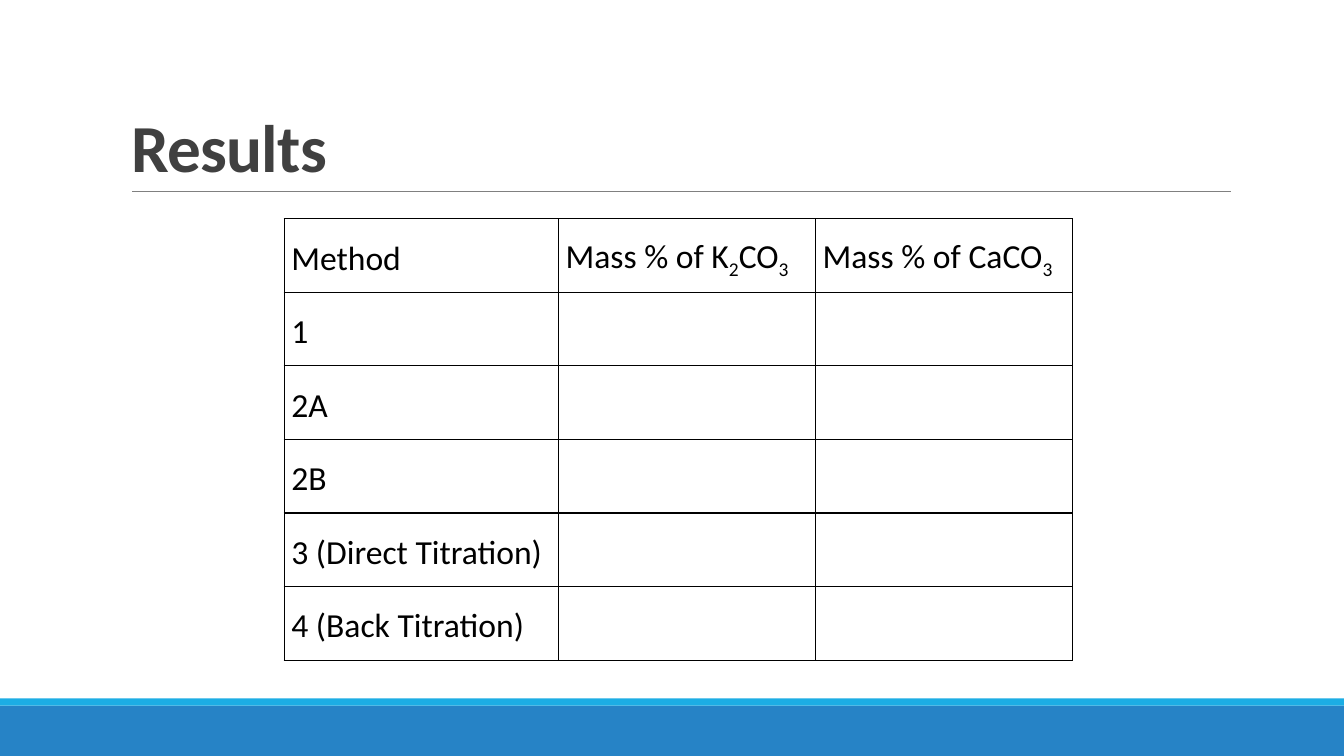
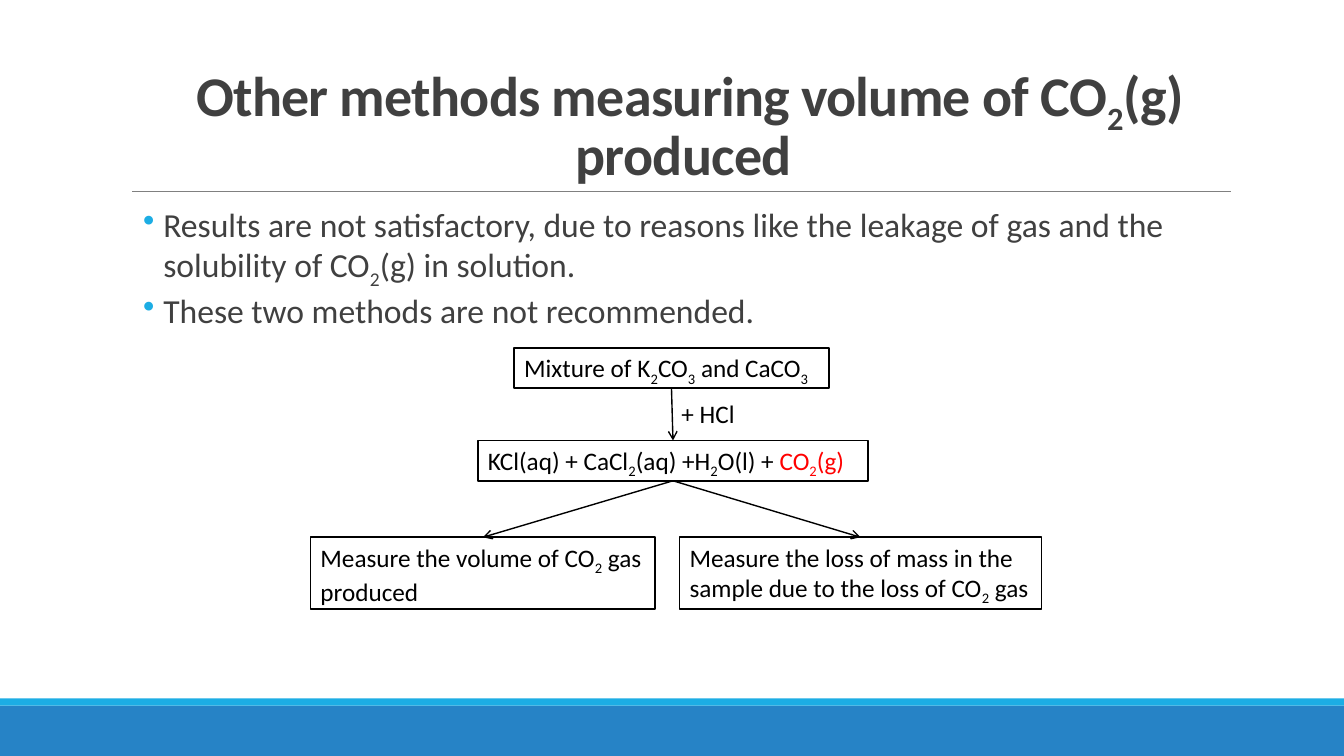
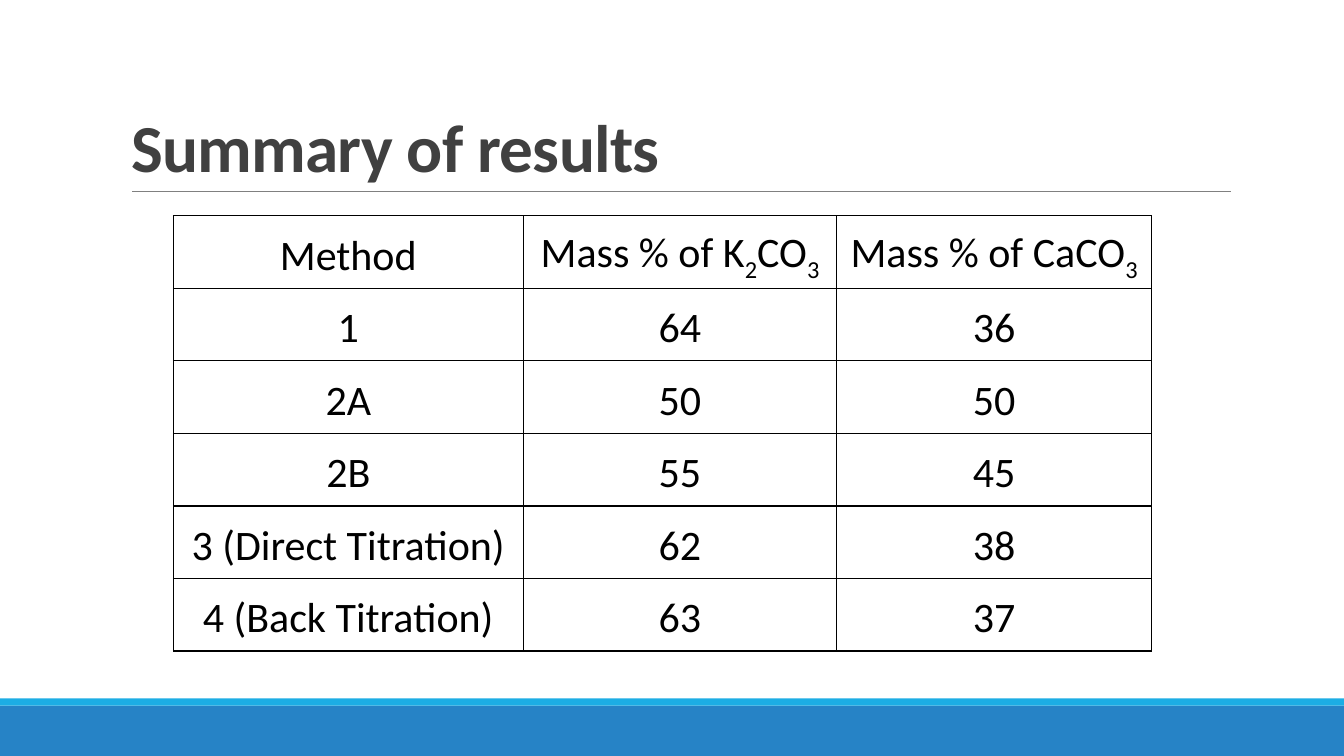
from lxml import etree
from pptx import Presentation
from pptx.dml.color import RGBColor
from pptx.enum.shapes import MSO_CONNECTOR, MSO_SHAPE
from pptx.enum.text import MSO_ANCHOR, MSO_AUTO_SIZE, PP_ALIGN
from pptx.oxml.ns import qn
from pptx.util import Inches, Pt

COLORS = {"band": "2683C6", "accent": "1CADE4", "rule": "808080", "text": "404040",
          "black": "000000", "white": "FFFFFF", "red": "FF0000"}
FONT = "Calibri"
TITLE_BOX = (1.2, 0.31, 11, 1.59)
HEADERS = ["Method", "Mass % of K~2~CO~3~", "Mass % of CaCO~3~"]
METHODS = ["1", "2A", "2B", "3 (Direct Titration)", "4 (Back Titration)"]
RESULTS = [(64, 36), (50, 50), (55, 45), (62, 38), (63, 37)]


def rgb(name):
    return RGBColor.from_string(COLORS[name])


def inches(*values):
    return [Inches(v) for v in values]


def add_runs(p, text, size, color="black", bold=False, spacing=None):
    """Add text as runs; parts between tildes become subscripts."""
    for i, part in enumerate(text.split("~")):
        if not part:
            continue
        r = p.add_run()
        r.text = part
        r.font.name, r.font.size, r.font.bold = FONT, Pt(size), bold
        r.font.color.rgb = rgb(color)
        rPr = r.font._element
        if i % 2:
            rPr.set("baseline", "-25000")
        if spacing is not None:
            rPr.set("spc", str(int(spacing * 100)))


def add_line(s, start, end, color, width, arrow=False):
    line = s.shapes.add_connector(MSO_CONNECTOR.STRAIGHT, *inches(*start, *end))
    line.line.color.rgb = rgb(color)
    line.line.width = Pt(width)
    if arrow:
        etree.SubElement(line.line._get_or_add_ln(), qn("a:tailEnd"), type="arrow")
    etree.SubElement(line._element.spPr, qn("a:effectLst"))
    return line


def add_rect(s, box, fill, outline=None):
    sp = s.shapes.add_shape(MSO_SHAPE.RECTANGLE, *inches(*box))
    sp.shadow.inherit = False
    sp.fill.solid()
    sp.fill.fore_color.rgb = rgb(fill)
    if outline:
        sp.line.color.rgb = rgb(outline)
        sp.line.width = Pt(1.25)
    else:
        sp.line.fill.background()
    return sp


def add_titled_slide(prs, title, size=48, box=TITLE_BOX, align=PP_ALIGN.LEFT):
    s = prs.slides.add_slide(prs.slide_layouts[5])
    add_rect(s, (0, 7, 13.33, 0.5), "band")
    add_rect(s, (0, 6.93, 13.33, 0.07), "accent")
    add_line(s, (1.31, 1.9), (12.21, 1.9), "rule", 0.5)
    sp = s.shapes.title
    sp.left, sp.top, sp.width, sp.height = inches(*box)
    tf = sp.text_frame
    tf.auto_size = MSO_AUTO_SIZE.NONE
    tf.vertical_anchor = MSO_ANCHOR.BOTTOM
    p = tf.paragraphs[0]
    p.alignment, p.line_spacing = align, 0.85
    add_runs(p, title, size, "text", bold=True, spacing=-0.5)
    return s


def add_borders(cell):
    tcPr = cell._tc.get_or_add_tcPr()
    for i, side in enumerate(("lnL", "lnR", "lnT", "lnB")):
        ln = etree.Element(qn("a:" + side), w=str(Pt(1)))
        fill = etree.SubElement(ln, qn("a:solidFill"))
        etree.SubElement(fill, qn("a:srgbClr"), val=COLORS["black"])
        tcPr.insert(i, ln)


def add_results_table(s, left, top, col_widths, row_height, rows, size, align):
    table = s.shapes.add_table(len(rows), len(col_widths), *inches(
        left, top, sum(col_widths), row_height * len(rows))).table
    table.first_row = table.horz_banding = False
    for column, width in zip(table.columns, col_widths):
        column.width = Inches(width)
    for row, texts in zip(table.rows, rows):
        row.height = Inches(row_height)
        for cell, text in zip(row.cells, texts):
            cell.fill.background()
            add_borders(cell)
            cell.vertical_anchor = MSO_ANCHOR.MIDDLE
            cell.margin_left = cell.margin_right = Inches(0.07)
            cell.margin_top = cell.margin_bottom = 0
            if text:
                p = cell.text_frame.paragraphs[0]
                p.alignment, p.line_spacing = align, 1.15
                p.space_before = p.space_after = Pt(5)
                add_runs(p, text, size)


def add_bullets(s, box, items):
    tf = s.shapes.add_textbox(*inches(*box)).text_frame
    tf.word_wrap = True
    tf.margin_left = tf.margin_right = 0
    for i, item in enumerate(items):
        p = tf.add_paragraph() if i else tf.paragraphs[0]
        p.line_spacing, p.space_before, p.space_after = 0.9, Pt(2), Pt(4)
        pPr = p._p.get_or_add_pPr()
        pPr.set("marL", str(Inches(0.42)))
        pPr.set("indent", str(Inches(-0.2)))
        color = etree.SubElement(pPr, qn("a:buClr"))
        etree.SubElement(color, qn("a:srgbClr"), val=COLORS["accent"])
        etree.SubElement(pPr, qn("a:buChar"), char="•")
        add_runs(p, item, 24, "text")


def fill_label(sp, *parts):
    """Write (text, color) parts as one left-aligned paragraph."""
    tf = sp.text_frame
    tf.word_wrap = True
    tf.auto_size = MSO_AUTO_SIZE.SHAPE_TO_FIT_TEXT
    tf.vertical_anchor = MSO_ANCHOR.TOP
    p = tf.paragraphs[0]
    p.alignment = PP_ALIGN.LEFT
    for text, color in parts:
        add_runs(p, text, 18, color)


def add_reaction_flow(s, left, top):
    def step(x, y, width, height, *parts):
        sp = add_rect(s, (left + x, top + y, width, height), "white", "black")
        fill_label(sp, *parts)
        return sp

    mixture = step(2.02, 0, 3.12, 0.4, ("Mixture of K~2~CO~3~ and CaCO~3~", "black"))
    products = step(1.66, 0.92, 3.87, 0.4,
                    ("KCl(aq) + CaCl~2~(aq) +H~2~O(l) + ", "black"), ("CO~2~(g)", "red"))
    volume = step(0, 1.88, 3.42, 0.71, ("Measure the volume of CO~2~ gas produced", "black"))
    mass = step(3.66, 1.88, 3.59, 0.71,
                ("Measure the loss of mass in the sample due to the loss of CO~2~ gas", "black"))
    reagent = s.shapes.add_textbox(*inches(left + 3.58, top + 0.45, 2.29, 0.4))
    fill_label(reagent, ("+ HCl", "black"))
    for source, target in ((mixture, products), (products, volume), (products, mass)):
        arrow = add_line(s, (0, 0), (1, 1), "black", 1, arrow=True)
        arrow.begin_connect(source, 2)
        arrow.end_connect(target, 0)


def main():
    prs = Presentation()
    prs.slide_width, prs.slide_height = inches(13.33, 7.5)

    s = add_titled_slide(prs, "Results")
    blank_rows = [[method, "", ""] for method in METHODS]
    add_results_table(s, 2.82, 2.17, (2.72, 2.55, 2.55), 0.73,
                      [HEADERS] + blank_rows, 24, PP_ALIGN.LEFT)

    s = add_titled_slide(prs, "Other methods measuring volume of CO~2~(g) produced ",
                         40, (0.96, 0.31, 11.76, 1.59), PP_ALIGN.CENTER)
    add_bullets(s, (1.2, 2.02, 11, 1.55), [
        "Results are not satisfactory, due to reasons like the leakage of gas "
        "and the solubility of CO~2~(g) in solution.",
        "These two methods are not recommended."])
    add_reaction_flow(s, 3.08, 3.45)

    s = add_titled_slide(prs, "Summary of results")
    result_rows = [[method, *map(str, masses)] for method, masses in zip(METHODS, RESULTS)]
    add_results_table(s, 1.72, 2.14, (3.47, 3.11, 3.12), 0.72,
                      [HEADERS] + result_rows, 30, PP_ALIGN.CENTER)

    prs.save("out.pptx")


if __name__ == "__main__":
    main()
